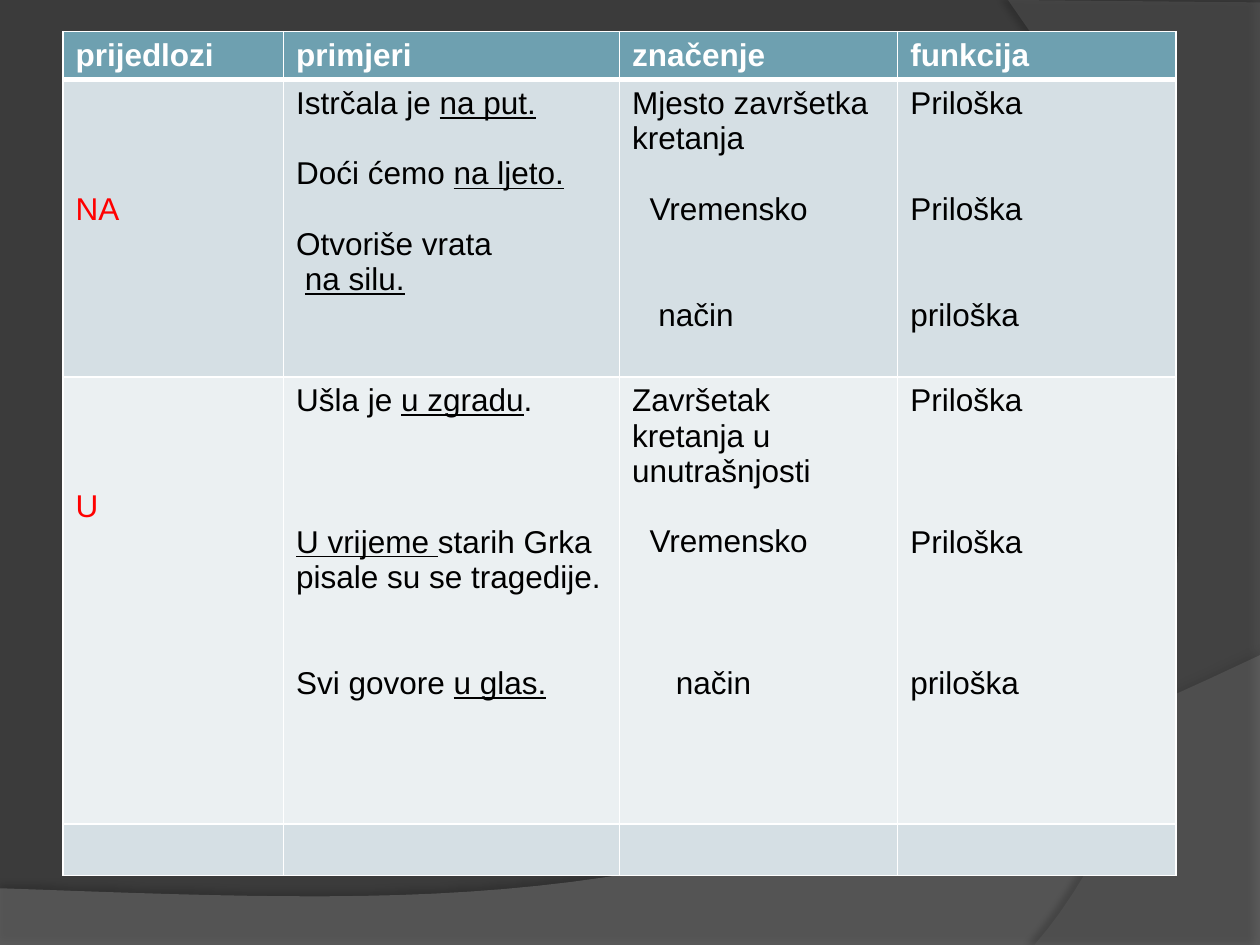
from dataclasses import dataclass

from lxml import etree
from pptx import Presentation
from pptx.dml.color import RGBColor
from pptx.oxml import parse_xml
from pptx.oxml.ns import nsdecls, qn
from pptx.util import Pt

# Each paragraph is (lines left free above, indent in points, text);
# words between underscores are underlined.
HEADINGS = ["prijedlozi", "primjeri", "značenje", "funkcija"]
ROWS = [
    [
        [(3, 0, "NA")],
        [(0, 0, "Istrčala je _na put._"), (1, 0, "Doći ćemo _na ljeto._"),
         (1, 0, "Otvoriše vrata"), (0, 5, "_na silu._")],
        [(0, 0, "Mjesto završetka kretanja"), (1, 10, "Vremensko"), (2, 15, "način")],
        [(0, 0, "Priloška"), (2, 0, "Priloška"), (2, 0, "priloška")],
    ],
    [
        [(3, 0, "U")],
        [(0, 0, "Ušla je _u zgradu_."),
         (3, 0, "_U vrijeme _starih Grka pisale su se tragedije."),
         (2, 0, "Svi govore _u glas._")],
        [(0, 0, "Završetak kretanja u unutrašnjosti"), (1, 10, "Vremensko"), (3, 25, "način")],
        [(0, 0, "Priloška"), (3, 0, "Priloška"), (3, 0, "priloška")],
    ],
    [[], [], [], []],
]
COLUMN_WIDTHS = [126, 192, 159, 159]
ROW_HEIGHTS = [27.4, 170, 255.6, 27.4]
TABLE_LEFT, TABLE_TOP = 36, 18

# Outlines: a point is a straight step, three points are a Bézier curve.
BOTTOM_WAVE = [(0, 507.6), (0, 540), (720, 540), (720, 374.4),
               ((402.5, 524.9), (281.5, 517.7), (0, 507.6))]
RIGHT_WAVE = [(720, 1.4), (720, 540), (591.1, 540),
              ((673.2, 445.7), (733, 216), (576, 0))]


@dataclass(frozen=True)
class Theme:
    font: str = "Arial"
    size: float = 18
    line: float = 20.2
    margin: float = 3.6
    background: str = "3B3B3B"
    header: str = "6EA0B0"
    bands: tuple = ("D5DFE4", "EBF0F2")
    border: str = "FFFFFF"
    heading_text: str = "FFFFFF"
    text: str = "000000"
    accent: str = "FF0000"
    bottom_wave: str = "7F7F7F"
    right_wave: str = "5E5E5E"


THEME = Theme()


def flatten(outline, steps=32):
    """Turn an outline with curves into a list of points."""
    points = []
    for part in outline:
        if not isinstance(part[0], tuple):
            points.append(part)
            continue
        curve = (points[-1], *part)
        for step in range(1, steps + 1):
            t = step / steps
            weights = ((1 - t) ** 3, 3 * t * (1 - t) ** 2, 3 * t * t * (1 - t), t ** 3)
            points.append(tuple(sum(w * point[axis] for w, point in zip(weights, curve))
                                for axis in (0, 1)))
    return points


def add_wave(slide, outline, color, opacity, shadow):
    points = [(Pt(x), Pt(y)) for x, y in flatten(outline)]
    builder = slide.shapes.build_freeform(*points[0])
    builder.add_line_segments(points[1:], close=True)
    wave = builder.convert_to_shape()
    wave.fill.solid()
    wave.fill.fore_color.rgb = RGBColor.from_string(color)
    wave.line.fill.background()
    fill_color = wave.fill._xPr.find(qn("a:solidFill"))[0]
    etree.SubElement(fill_color, qn("a:alpha"), val=str(opacity * 1000))
    shade, blur, distance, angle = shadow
    wave._element.spPr.append(parse_xml(
        f'<a:effectLst {nsdecls("a")}><a:outerShdw blurRad="{Pt(blur)}" '
        f'dist="{Pt(distance)}" dir="{angle * 60000}" algn="ctr" rotWithShape="0">'
        f'<a:srgbClr val="000000"><a:alpha val="{shade * 1000}"/></a:srgbClr>'
        f'</a:outerShdw></a:effectLst>'))


def style_cell(cell, color, top, bottom):
    """Set borders (top and bottom widths in points) and fill."""
    properties = cell._tc.get_or_add_tcPr()
    for side, width in (("L", 1), ("R", 1), ("T", top), ("B", bottom)):
        properties.append(parse_xml(
            f'<a:ln{side} {nsdecls("a")} w="{Pt(width)}"><a:solidFill>'
            f'<a:srgbClr val="{THEME.border}"/></a:solidFill></a:ln{side}>'))
    cell.fill.solid()
    cell.fill.fore_color.rgb = RGBColor.from_string(color)


def write_cell(cell, paragraphs, color, bold=False):
    frame = cell.text_frame
    for index, (free_lines, indent, text) in enumerate(paragraphs):
        gap = free_lines * THEME.line
        if index == 0:
            para = frame.paragraphs[0]
            cell.margin_top = Pt(THEME.margin + gap)
        else:
            para = frame.add_paragraph()
            para.space_before = Pt(gap)
        if indent:
            para._p.get_or_add_pPr().set("marL", str(Pt(indent)))
        for position, words in enumerate(text.split("_")):
            if not words:
                continue
            span = para.add_run()
            span.text = words
            font = span.font
            font.name, font.size, font.bold = THEME.font, Pt(THEME.size), bold
            font.underline = position % 2 == 1
            font.color.rgb = RGBColor.from_string(color)


def add_preposition_table(slide):
    table = slide.shapes.add_table(
        len(ROW_HEIGHTS), len(COLUMN_WIDTHS), Pt(TABLE_LEFT), Pt(TABLE_TOP),
        Pt(sum(COLUMN_WIDTHS)), Pt(sum(ROW_HEIGHTS))).table
    for column, width in zip(table.columns, COLUMN_WIDTHS):
        column.width = Pt(width)
    for row, height in zip(table.rows, ROW_HEIGHTS):
        row.height = Pt(height)
    for column, heading in enumerate(HEADINGS):
        cell = table.cell(0, column)
        style_cell(cell, THEME.header, 1, 3)
        write_cell(cell, [(0, 0, heading)], THEME.heading_text, bold=True)
    for row, contents in enumerate(ROWS, start=1):
        for column, paragraphs in enumerate(contents):
            cell = table.cell(row, column)
            style_cell(cell, THEME.bands[(row - 1) % 2], 3 if row == 1 else 1, 1)
            write_cell(cell, paragraphs, THEME.accent if column == 0 else THEME.text)


def main():
    deck = Presentation()
    deck.slide_width, deck.slide_height = Pt(720), Pt(540)
    page = deck.slides.add_slide(deck.slide_layouts[6])
    page.background.fill.solid()
    page.background.fill.fore_color.rgb = RGBColor.from_string(THEME.background)
    add_wave(page, BOTTOM_WAVE, THEME.bottom_wave, 45, (35, 4, 3.5, 270))
    add_wave(page, RIGHT_WAVE, THEME.right_wave, 40, (45, 4, 4, 180))
    add_preposition_table(page)
    deck.save("out.pptx")


if __name__ == "__main__":
    main()
